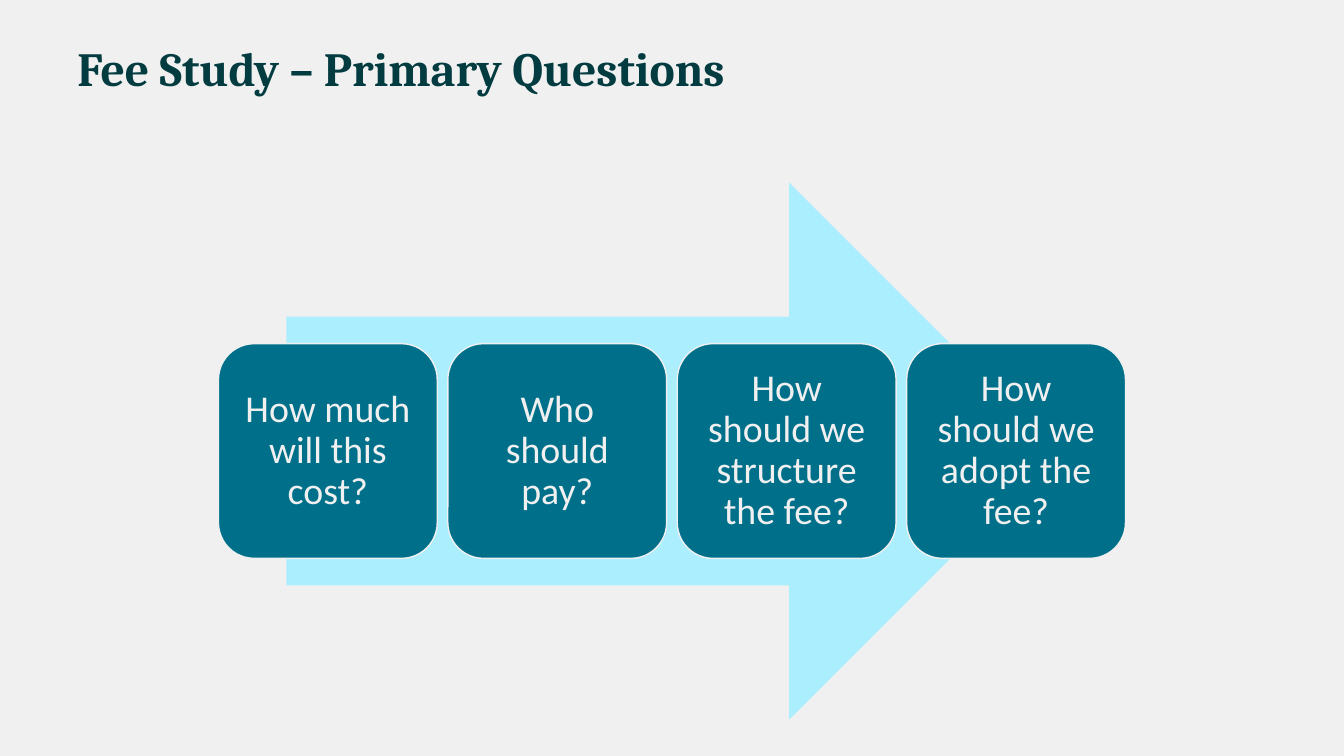
"""Build the fee study slide: four question cards over a wide arrow."""
import dataclasses

import pptx
import pptx.dml.color
import pptx.enum.shapes
import pptx.enum.text
import pptx.util


@dataclasses.dataclass(frozen=True)
class Theme:
    background: str = "F0F0F0"
    title: str = "023B40"
    arrow: str = "ABEFFF"
    card: str = "00708A"
    card_text: str = "F0F0F0"
    title_font: str = "Cambria"
    card_font: str = "Calibri"
    title_size: float = 34
    card_size: float = 27
    card_outline: float = 1
    line_spacing: float = 0.9


@dataclasses.dataclass(frozen=True)
class Area:
    """Left, top, width and height in percent of the slide."""
    left: float
    top: float
    width: float
    height: float


THEME = Theme()
SLIDE_WIDTH = pptx.util.Inches(13.33)
SLIDE_HEIGHT = pptx.util.Inches(7.5)
TITLE_AREA = Area(5.03, 1.07, 90, 16.67)
ARROW_AREA = Area(21.3, 24.13, 57.4, 71.07)
CARD_WIDTH, CARD_HEIGHT, CARD_GAP = 16.28, 28.4, 0.79
CARD_INSET = pptx.util.Inches(0.11)
QUESTIONS = (
    "How much will this cost?",
    "Who should pay?",
    "How should we structure the fee?",
    "How should we adopt the fee?",
)


def color(value: str) -> pptx.dml.color.RGBColor:
    return pptx.dml.color.RGBColor.from_string(value)


def place(area: Area) -> tuple[int, int, int, int]:
    return (
        round(SLIDE_WIDTH * area.left / 100),
        round(SLIDE_HEIGHT * area.top / 100),
        round(SLIDE_WIDTH * area.width / 100),
        round(SLIDE_HEIGHT * area.height / 100),
    )


def write(box, text: str, font: str, size: float, ink: str, bold: bool, align) -> None:
    frame = box.text_frame
    frame.text = text
    frame.word_wrap = True
    frame.vertical_anchor = pptx.enum.text.MSO_ANCHOR.MIDDLE
    para = frame.paragraphs[0]
    para.alignment = align
    para.line_spacing = THEME.line_spacing
    span = para.runs[0]
    span.font.name = font
    span.font.size = pptx.util.Pt(size)
    span.font.bold = bold
    span.font.color.rgb = color(ink)


def add_filled(page, kind, area: Area, fill: str):
    shape = page.shapes.add_shape(kind, *place(area))
    shape.shadow.inherit = False
    shape.fill.solid()
    shape.fill.fore_color.rgb = color(fill)
    shape.line.fill.background()
    return shape


def add_title(page, text: str) -> None:
    box = page.shapes.add_textbox(*place(TITLE_AREA))
    write(box, text, THEME.title_font, THEME.title_size, THEME.title, True,
          pptx.enum.text.PP_ALIGN.LEFT)


def add_card(page, area: Area, question: str) -> None:
    card = add_filled(page, pptx.enum.shapes.MSO_SHAPE.ROUNDED_RECTANGLE, area, THEME.card)
    card.line.color.rgb = color(THEME.background)
    card.line.width = pptx.util.Pt(THEME.card_outline)
    frame = card.text_frame
    frame.margin_left = frame.margin_right = CARD_INSET
    frame.margin_top = frame.margin_bottom = CARD_INSET
    write(card, question, THEME.card_font, THEME.card_size, THEME.card_text, False,
          pptx.enum.text.PP_ALIGN.CENTER)


def add_cards(page) -> None:
    pitch = CARD_WIDTH + CARD_GAP
    left = (100 - (len(QUESTIONS) * pitch - CARD_GAP)) / 2
    top = ARROW_AREA.top + (ARROW_AREA.height - CARD_HEIGHT) / 2
    for column, question in enumerate(QUESTIONS):
        area = Area(left + column * pitch, top, CARD_WIDTH, CARD_HEIGHT)
        add_card(page, area, question)


def main() -> None:
    deck = pptx.Presentation()
    deck.slide_width = SLIDE_WIDTH
    deck.slide_height = SLIDE_HEIGHT
    page = deck.slides.add_slide(deck.slide_layouts[6])
    page.background.fill.solid()
    page.background.fill.fore_color.rgb = color(THEME.background)
    add_title(page, "Fee Study – Primary Questions")
    add_filled(page, pptx.enum.shapes.MSO_SHAPE.RIGHT_ARROW, ARROW_AREA, THEME.arrow)
    add_cards(page)
    deck.save("out.pptx")


if __name__ == "__main__":
    main()
